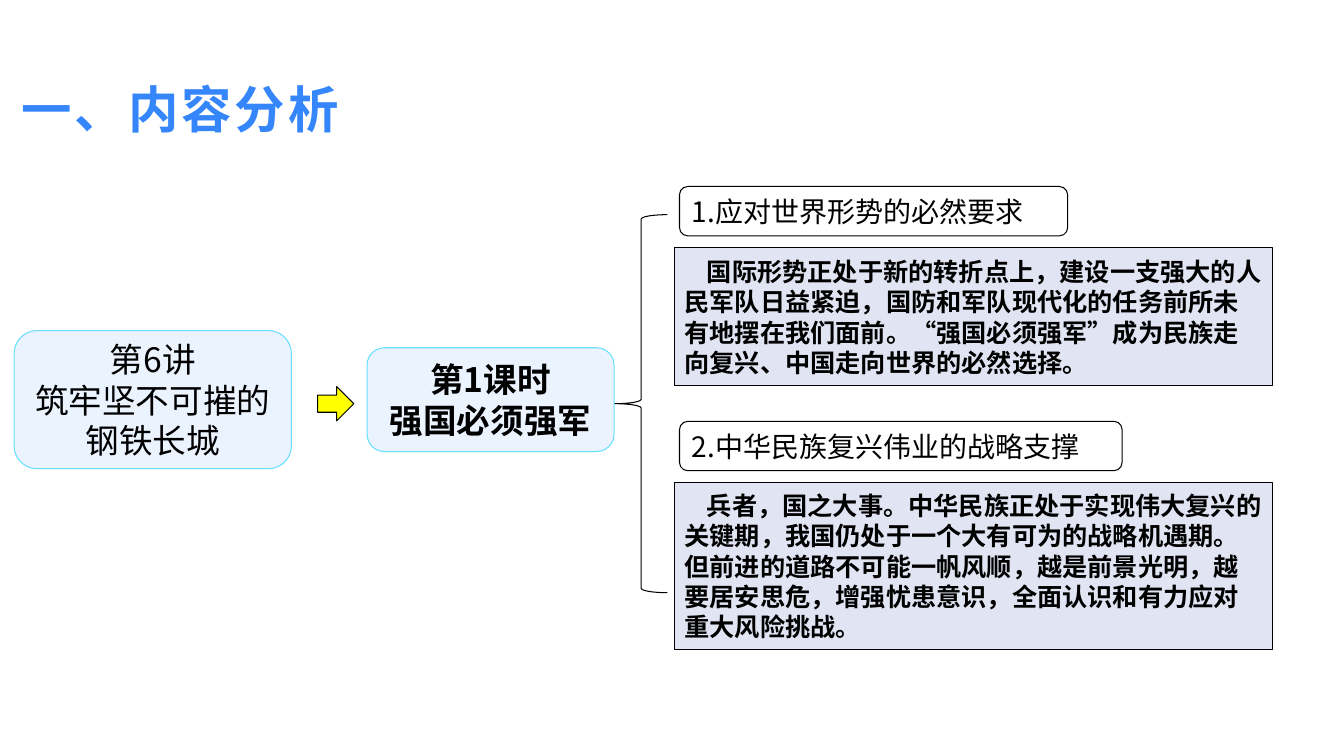
"""Build the content analysis slide: a lecture, its lesson and two argued points."""
import pptx
import pptx.util
import pptx.dml.color
import pptx.enum.shapes
import pptx.enum.text
import lxml.etree

WIDTH, HEIGHT = 13.33, 7.5
FONT = "Noto Sans CJK SC"
BLACK, BLUE, YELLOW = "000000", "3586FB", "FFFF00"
PALE, CYAN, LAVENDER = "EBF3FF", "67DFFF", "E1E4F2"
SHAPE = pptx.enum.shapes.MSO_SHAPE
ALIGN = pptx.enum.text.PP_ALIGN
ANCHOR = pptx.enum.text.MSO_ANCHOR

TITLE = "一、内容分析"
LECTURE = ["第6讲", "筑牢坚不可摧的钢铁长城"]
LESSON = ["第1课时", "强国必须强军"]
POINTS = [
    {"heading": "1.应对世界形势的必然要求", "heading_width": 28.88, "detail_height": 18.27,
     "detail": "国际形势正处于新的转折点上，建设一支强大的人民军队日益紧迫，"
               "国防和军队现代化的任务前所未有地摆在我们面前。"
               "“强国必须强军”成为民族走向复兴、中国走向世界的必然选择。"},
    {"heading": "2.中华民族复兴伟业的战略支撑", "heading_width": 32.93, "detail_height": 22,
     "detail": "兵者，国之大事。中华民族正处于实现伟大复兴的关键期，"
               "我国仍处于一个大有可为的战略机遇期。但前进的道路不可能一帆风顺，"
               "越是前景光明，越要居安思危，增强忧患意识，全面认识和有力应对重大风险挑战。"},
]

TITLE_AREA = (1.05, 8.53, 47.79, 10.27)
FLOW_MIDDLE, LINK_MIDDLE = 52.87, 53.4
POINT_TOP, POINT_PITCH = 24.67, 31.07
HEADING_LEFT, HEADING_HEIGHT = 50.56, 6.53
DETAIL_LEFT, DETAIL_WIDTH, DETAIL_DROP = 50.19, 44.49, 8.13


def color(value):
    return pptx.dml.color.RGBColor.from_string(value)


def place(left, top, width, height):
    """Turn percentages of the slide into lengths."""
    shares = ((left, WIDTH), (top, HEIGHT), (width, WIDTH), (height, HEIGHT))
    return [pptx.util.Inches(share * size / 100) for share, size in shares]


def centred(left, middle, width, height):
    """Give the area whose vertical centre is at middle."""
    return left, middle - height / 2, width, height


def write(box, lines, size, bold=False, ink=BLACK, align=ALIGN.LEFT,
          anchor=ANCHOR.MIDDLE, indent=0, spacing=0):
    """Fill a box with one paragraph for each line."""
    frame = box.text_frame
    frame.word_wrap = True
    frame.vertical_anchor = anchor
    for number, line in enumerate(lines):
        para = frame.add_paragraph() if number else frame.paragraphs[0]
        para.alignment = align
        if indent:
            para._p.get_or_add_pPr().set("indent", str(pptx.util.Pt(indent)))
        span = para.add_run()
        span.text = line
        span.font.name = FONT
        span.font.size = pptx.util.Pt(size)
        span.font.bold = bold
        span.font.color.rgb = color(ink)
        properties = span._r.get_or_add_rPr()
        properties.set("lang", "zh-CN")
        if spacing:
            properties.set("spc", str(spacing))
        latin = properties.find(pptx.oxml.ns.qn("a:latin"))
        east_asian = lxml.etree.Element(pptx.oxml.ns.qn("a:ea"), typeface=FONT)
        latin.addnext(east_asian)


def draw(page, kind, area, fill=None, line=BLACK):
    """Add a preset shape with a thin outline."""
    shape = page.shapes.add_shape(kind, *place(*area))
    shape.shadow.inherit = False
    if fill:
        shape.fill.solid()
        shape.fill.fore_color.rgb = color(fill)
    else:
        shape.fill.background()
    shape.line.color.rgb = color(line)
    shape.line.width = pptx.util.Pt(0.75)
    return shape


def main():
    """Lay out the slide and save it."""
    deck = pptx.Presentation()
    deck.slide_width = pptx.util.Inches(WIDTH)
    deck.slide_height = pptx.util.Inches(HEIGHT)
    page = deck.slides.add_slide(deck.slide_layouts[6])

    title = page.shapes.add_textbox(*place(*TITLE_AREA))
    frame = title.text_frame
    frame.margin_left = frame.margin_right = pptx.util.Inches(0.07)
    frame.margin_top = frame.margin_bottom = pptx.util.Inches(0.03)
    write(title, [TITLE], 36, True, BLUE, anchor=ANCHOR.BOTTOM, spacing=220)

    for lines, left, width, height, bold in ((LECTURE, 1.05, 20.63, 18.27, False),
                                             (LESSON, 27.31, 18.38, 13.73, True)):
        area = centred(left, FLOW_MIDDLE, width, height)
        box = draw(page, SHAPE.ROUNDED_RECTANGLE, area, PALE, CYAN)
        write(box, lines, 24, bold, align=ALIGN.CENTER)

    draw(page, SHAPE.RIGHT_ARROW, centred(23.63, LINK_MIDDLE, 2.7, 4.53), YELLOW)
    draw(page, SHAPE.LEFT_BRACE, centred(45.76, LINK_MIDDLE, 3.9, 50))

    for number, point in enumerate(POINTS):
        top = POINT_TOP + number * POINT_PITCH
        area = (HEADING_LEFT, top, point["heading_width"], HEADING_HEIGHT)
        write(draw(page, SHAPE.ROUNDED_RECTANGLE, area), [point["heading"]], 20)
        area = (DETAIL_LEFT, top + DETAIL_DROP, DETAIL_WIDTH, point["detail_height"])
        detail = draw(page, SHAPE.RECTANGLE, area, LAVENDER)
        write(detail, [point["detail"]], 18, True, indent=16)

    deck.save("out.pptx")


if __name__ == "__main__":
    main()
